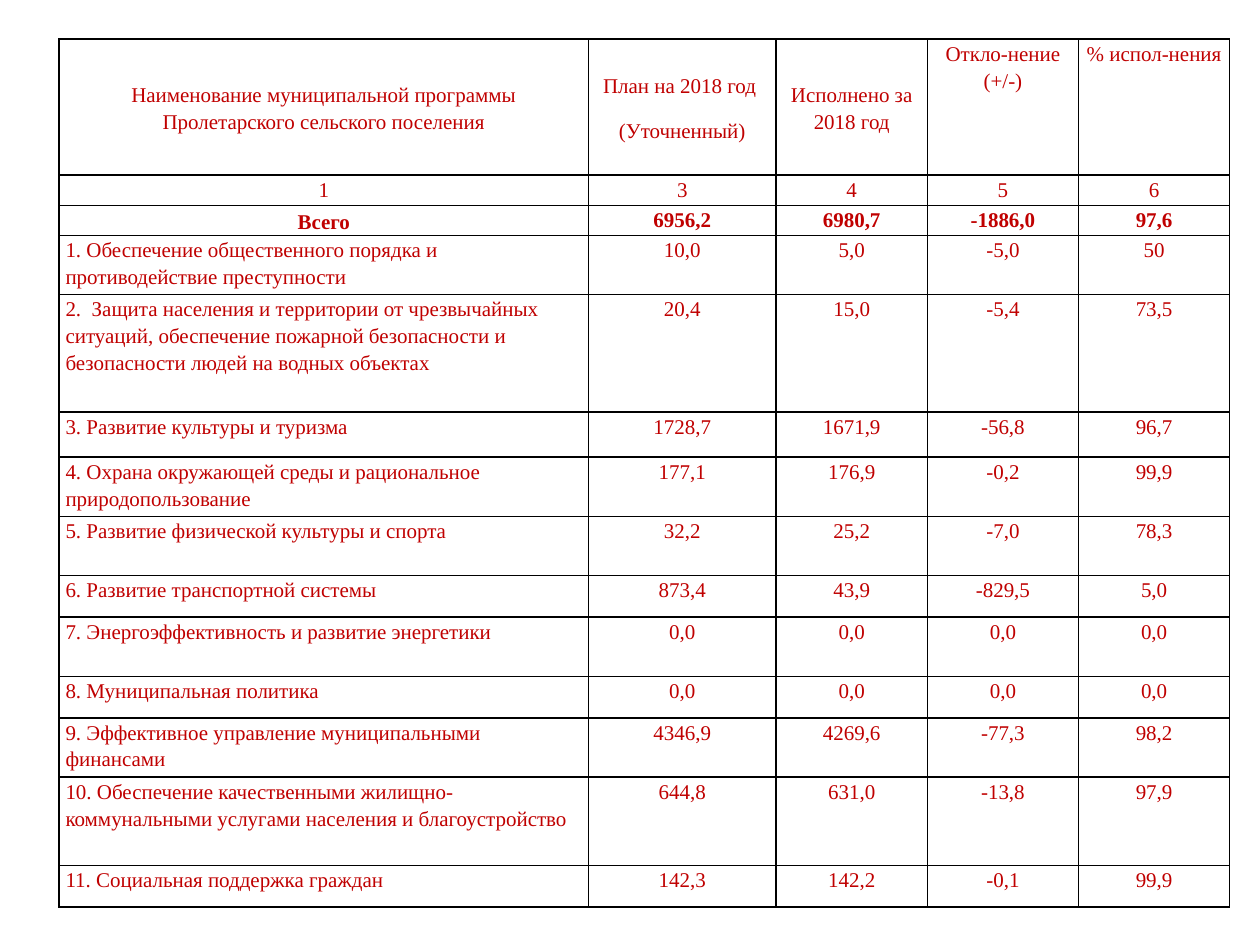
"""Build a slide with the table of municipal programme spending for 2018."""
from collections import namedtuple

from lxml import etree
from pptx import Presentation
from pptx import util as u
from pptx.dml.color import RGBColor
from pptx.enum import text
from pptx.oxml import ns

Theme = namedtuple("Theme", "font size ink line line_width")
theme = Theme("Times New Roman", u.Pt(12), RGBColor(0xC0, 0, 0), "000000", u.Pt(1))

CENTER, LEFT = text.PP_ALIGN.CENTER, text.PP_ALIGN.LEFT
TOP, MIDDLE = text.MSO_ANCHOR.TOP, text.MSO_ANCHOR.MIDDLE

column_widths = [4.2, 1.49, 1.2, 1.2, 1.2]
rows = [
    (1.08, "Наименование муниципальной программы Пролетарского сельского поселения",
     "План на 2018 год \n(Уточненный)", "Исполнено за 2018 год", "Откло-нение (+/-)", "% испол-нения"),
    (0.24, "1", "3", "4", "5", "6"),
    (0.24, "Всего", "6956,2", "6980,7", "-1886,0", "97,6"),
    (0.47, "1. Обеспечение общественного порядка и противодействие преступности",
     "10,0", "5,0", "-5,0", "50"),
    (0.93, "2.  Защита населения и территории от чрезвычайных ситуаций, обеспечение "
     "пожарной безопасности и безопасности людей на водных объектах",
     "20,4", "15,0", "-5,4", "73,5"),
    (0.36, "3. Развитие культуры и туризма", "1728,7", "1671,9", "-56,8", "96,7"),
    (0.47, "4. Охрана окружающей среды и рациональное природопользование",
     "177,1", "176,9", "-0,2", "99,9"),
    (0.47, "5. Развитие физической культуры и спорта", "32,2", "25,2", "-7,0", "78,3"),
    (0.33, "6. Развитие транспортной системы", "873,4", "43,9", "-829,5", "5,0"),
    (0.47, "7. Энергоэффективность и развитие энергетики", "0,0", "0,0", "0,0", "0,0"),
    (0.33, "8. Муниципальная политика", "0,0", "0,0", "0,0", "0,0"),
    (0.47, "9. Эффективное управление муниципальными финансами",
     "4346,9", "4269,6", "-77,3", "98,2"),
    (0.7, "10. Обеспечение качественными жилищно-коммунальными услугами населения и благоустройство",
     "644,8", "631,0", "-13,8", "97,9"),
    (0.33, "11. Социальная поддержка граждан", "142,3", "142,2", "-0,1", "99,9"),
]
TOTAL_ROW = 2
middle_cells = {(0, 0), (0, 1), (0, 2), (TOTAL_ROW, 0)}


def apply_format(target, values):
    for name, value in values.items():
        setattr(target, name, value)


def add_borders(cell):
    properties = cell._tc.get_or_add_tcPr()
    for side in ("a:lnL", "a:lnR", "a:lnT", "a:lnB"):
        line = etree.SubElement(properties, ns.qn(side), w=str(int(theme.line_width)))
        fill = etree.SubElement(line, ns.qn("a:solidFill"))
        etree.SubElement(fill, ns.qn("a:srgbClr"), val=theme.line)


deck = Presentation()
apply_format(deck, {"slide_width": u.Inches(10), "slide_height": u.Inches(7.5)})
page = deck.slides.add_slide(deck.slide_layouts[6])

frame = page.shapes.add_table(
    len(rows), len(column_widths),
    u.Inches(0.47), u.Inches(0.31), u.Inches(9.3), u.Inches(6.88))
table = frame.table
apply_format(table, {"first_row": False, "horz_banding": False})
for column, width in zip(table.columns, column_widths):
    column.width = u.Inches(width)

for row_index, (height, *values) in enumerate(rows):
    table.rows[row_index].height = u.Inches(height)
    for column_index, value in enumerate(values):
        cell = table.cell(row_index, column_index)
        add_borders(cell)
        cell.fill.background()
        apply_format(cell, {
            "margin_left": u.Inches(0.05), "margin_right": u.Inches(0.05),
            "margin_top": 0, "margin_bottom": 0,
            "vertical_anchor": MIDDLE if (row_index, column_index) in middle_cells else TOP,
        })
        cell.text_frame.text = value
        is_programme = column_index == 0 and row_index > TOTAL_ROW
        for para in cell.text_frame.paragraphs:
            apply_format(para, {
                "alignment": LEFT if is_programme else CENTER,
                "line_spacing": 1.15, "space_after": u.Pt(10),
            })
            for span in para.runs:
                apply_format(span.font, {
                    "name": theme.font, "size": theme.size, "bold": row_index == TOTAL_ROW,
                })
                span.font.color.rgb = theme.ink

deck.save("out.pptx")
